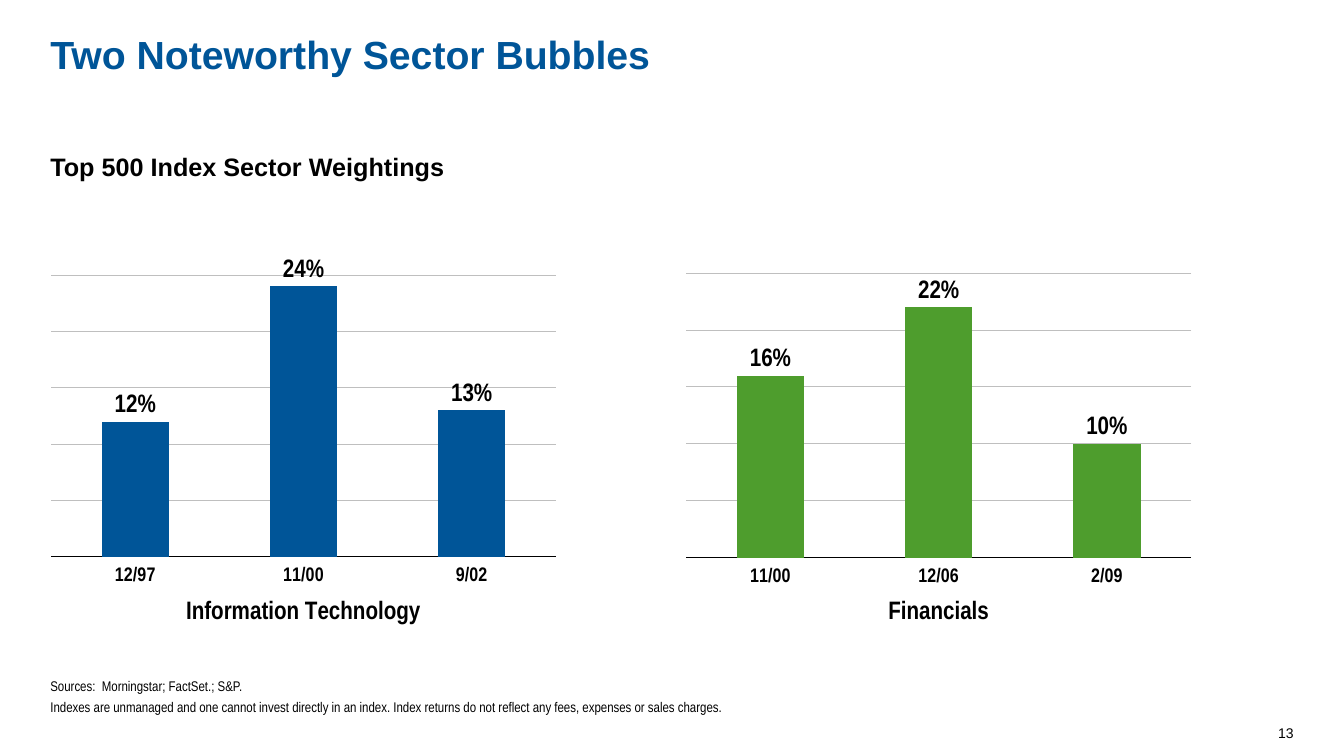
from pptx import Presentation
from pptx.chart.data import CategoryChartData
from pptx.dml.color import RGBColor
from pptx.enum.chart import XL_CHART_TYPE, XL_LABEL_POSITION, XL_TICK_LABEL_POSITION, XL_TICK_MARK
from pptx.enum.text import MSO_ANCHOR, PP_ALIGN
from pptx.oxml import parse_xml
from pptx.oxml.ns import nsdecls, qn
from pptx.util import Inches, Pt

COLUMN = XL_CHART_TYPE.COLUMN_CLUSTERED
OUTSIDE_END = XL_LABEL_POSITION.OUTSIDE_END
LABELS_LOW, LABELS_NONE = XL_TICK_LABEL_POSITION.LOW, XL_TICK_LABEL_POSITION.NONE
TICK_NONE = XL_TICK_MARK.NONE
TOP, BOTTOM = MSO_ANCHOR.TOP, MSO_ANCHOR.BOTTOM
LEFT, RIGHT = PP_ALIGN.LEFT, PP_ALIGN.RIGHT

SLIDE_W, SLIDE_H = 13.33, 7.5
MARGIN = 0.5
COLUMN_STEP = 6.3
BLACK, BLUE, GREEN, GREY = "000000", "005598", "4E9D2D", "BFBFBF"
SANS, NARROW = "Arial", "Arial Narrow"

SECTORS = [
    ("Information Technology", BLUE, ("12/97", "11/00", "9/02"), (0.12, 0.24, 0.13), (0.103, 0.702)),
    ("Financials", GREEN, ("11/00", "12/06", "2/09"), (0.16, 0.22, 0.1), (0.098, 0.709)),
]


def color(value):
    """Turn a hex string into a colour."""
    return RGBColor.from_string(value)


def set_font(font, size, name, bold=False, fill=BLACK):
    """Set size, typeface, weight and colour of a font."""
    font.size, font.name, font.bold = Pt(size), name, bold
    font.color.rgb = color(fill)


def add_text(s, box, lines, size, name=SANS, bold=False, fill=BLACK, anchor=TOP, align=LEFT, after=0):
    """Place paragraphs of one style in a box without insets."""
    tf = s.shapes.add_textbox(*map(Inches, box)).text_frame
    tf.word_wrap = True
    tf.vertical_anchor = anchor
    tf.margin_left = tf.margin_top = tf.margin_right = tf.margin_bottom = 0
    for i, line in enumerate(lines):
        p = tf.add_paragraph() if i else tf.paragraphs[0]
        p.text = line
        p.alignment = align
        p.space_after = Pt(after)
        set_font(p.font, size, name, bold, fill)


def set_plot_area(chart, top, height):
    """Fix the inner plot area, full width, at shares of the chart's height."""
    plot_area = chart._chartSpace.chart.plotArea
    for layout in plot_area.findall(qn("c:layout")):
        plot_area.remove(layout)
    plot_area.insert(0, parse_xml(
        f'<c:layout {nsdecls("c")}><c:manualLayout><c:layoutTarget val="inner"/>'
        '<c:xMode val="edge"/><c:yMode val="edge"/>'
        f'<c:x val="0"/><c:y val="{top}"/><c:w val="1"/><c:h val="{height}"/>'
        '</c:manualLayout></c:layout>'))


def add_sector_chart(s, box, sector, fill, dates, weights, plot_band):
    """Draw one sector's weightings as a column chart in a box."""
    data = CategoryChartData(number_format="0%")
    data.categories = dates
    data.add_series("Series 1", weights)
    chart = s.shapes.add_chart(COLUMN, *map(Inches, box), data).chart
    chart.has_legend = chart.has_title = False
    set_font(chart.font, 18, "Calibri")
    set_plot_area(chart, *plot_band)

    dates_axis = chart.category_axis
    dates_axis.tick_label_position = LABELS_LOW
    dates_axis.major_tick_mark = dates_axis.minor_tick_mark = TICK_NONE
    dates_axis.format.line.color.rgb = color(BLACK)
    dates_axis.format.line.width = Pt(1)
    set_font(dates_axis.tick_labels.font, 14, NARROW, True)
    p = dates_axis.axis_title.text_frame.paragraphs[0]
    p.text = sector
    set_font(p.font, 18, NARROW, True)

    weights_axis = chart.value_axis
    weights_axis.minimum_scale, weights_axis.maximum_scale = 0, 0.25
    weights_axis.major_unit = 0.05
    weights_axis.tick_label_position = LABELS_NONE
    weights_axis.major_tick_mark = weights_axis.minor_tick_mark = TICK_NONE
    weights_axis.format.line.fill.background()
    grid = weights_axis.major_gridlines.format.line
    grid.color.rgb = color(GREY)
    grid.width = Pt(0.75)

    plot = chart.plots[0]
    plot.gap_width = 150
    plot.vary_by_categories = False
    bars = plot.series[0].format.fill
    bars.solid()
    bars.fore_color.rgb = color(fill)
    plot.has_data_labels = True
    labels = plot.data_labels
    labels.show_value = True
    labels.number_format, labels.number_format_is_linked = "0%", False
    labels.position = OUTSIDE_END
    set_font(labels.font, 18, NARROW, True)


def add_heading(s, box):
    """Place the title and the subtitle below it."""
    x, y, w, h = box
    add_text(s, (x, y, w, 1), ["Two Noteworthy Sector Bubbles"], 28, bold=True, fill=BLUE)
    add_text(s, (x, y + h - 0.6, w, 0.6), ["Top 500 Index Sector Weightings"], 18, bold=True)


def add_sectors(s, box):
    """Place the sector charts side by side."""
    x, y, w, h = box
    for i, sector in enumerate(SECTORS):
        add_sector_chart(s, (x + i * COLUMN_STEP, y, w, h), *sector)


def add_footer(s, box):
    """Place the sources and, below them at the right, the page number."""
    x, y, w, h = box
    add_text(s, box, [
        "Sources:  Morningstar; FactSet.; S&P.",
        "Indexes are unmanaged and one cannot invest directly in an index. "
        "Index returns do not reflect any fees, expenses or sales charges.",
    ], 10, NARROW, anchor=BOTTOM, after=3)
    add_text(s, (x + w - 0.4, y + h + 0.05, 0.4, 0.2), ["13"], 10, anchor=BOTTOM, align=RIGHT)


def main():
    """Build and save the slide."""
    prs = Presentation()
    prs.slide_width, prs.slide_height = Inches(SLIDE_W), Inches(SLIDE_H)
    s = prs.slides.add_slide(prs.slide_layouts[6])
    add_heading(s, (MARGIN, 0.3, 9.5, 1.8))
    add_sectors(s, (MARGIN, 2.32, 5.02, 3.98))
    add_footer(s, (MARGIN, 6.72, SLIDE_W - 2 * MARGIN, 0.38))
    prs.save("out.pptx")


if __name__ == "__main__":
    main()
